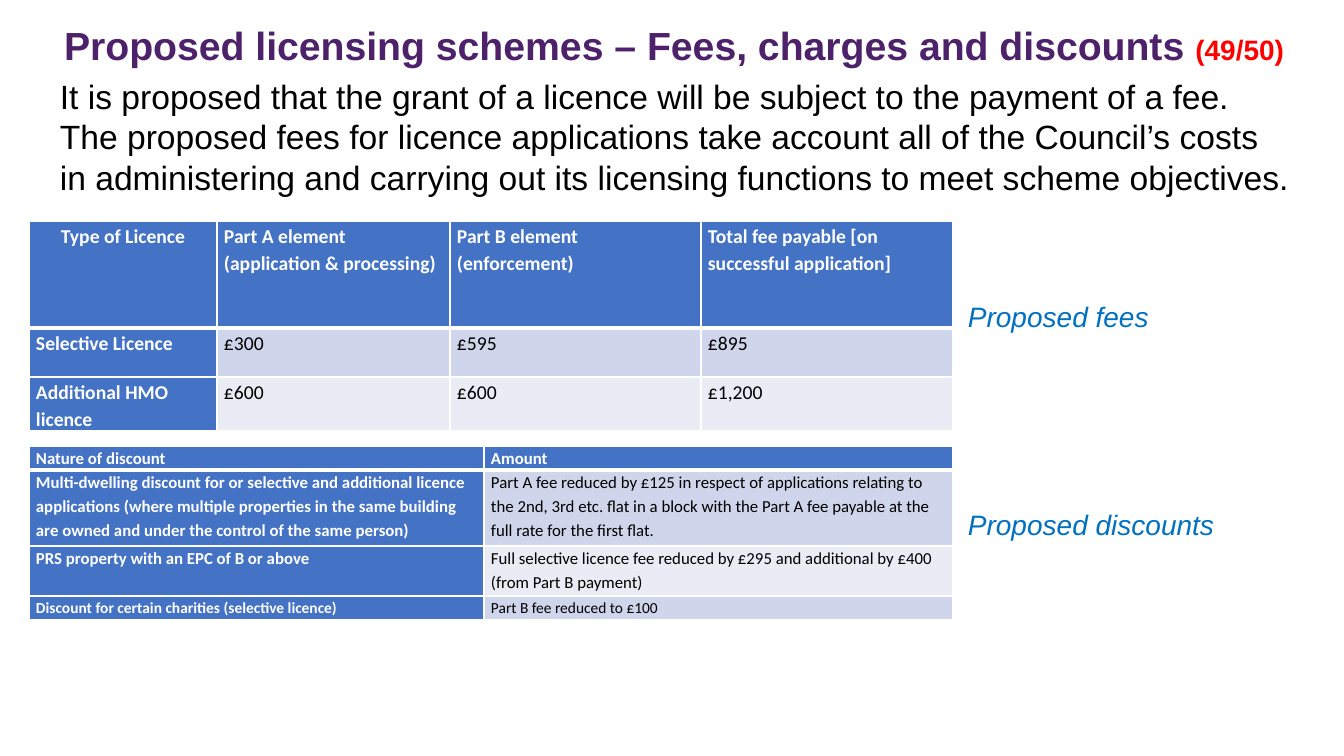
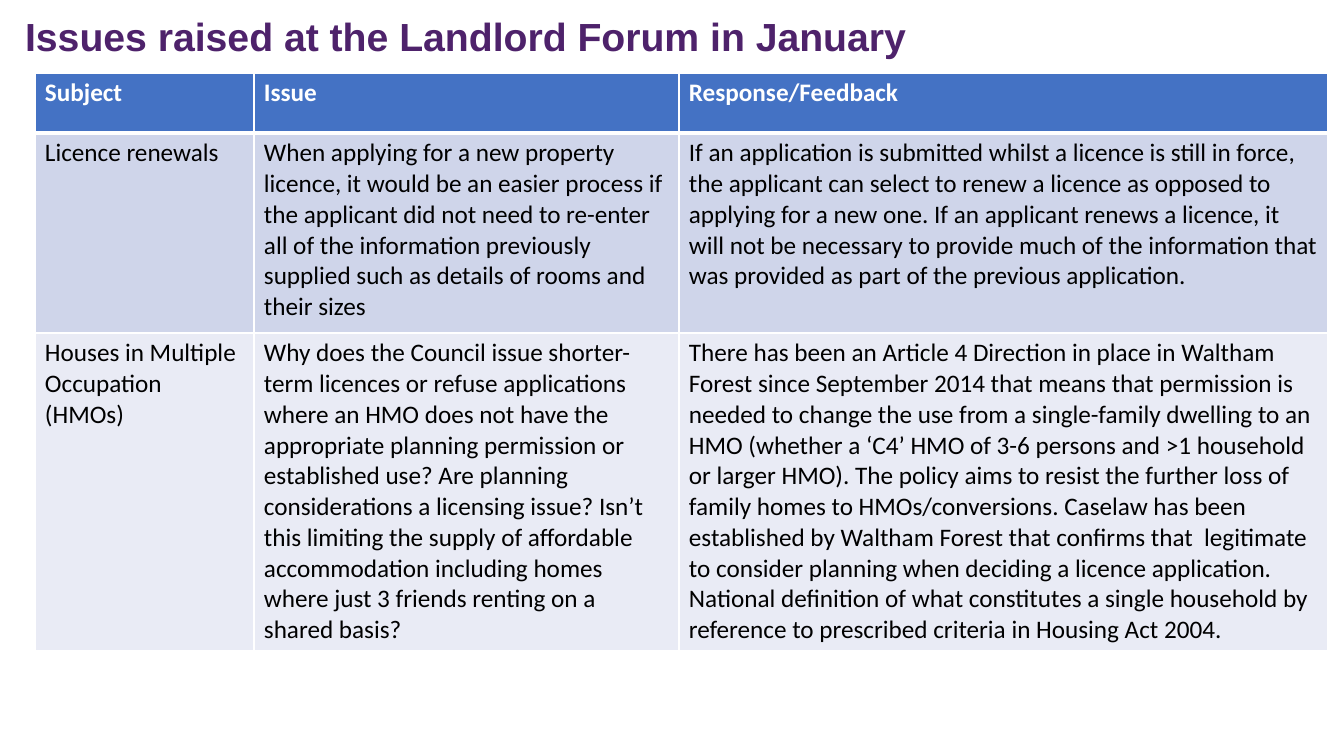
from dataclasses import dataclass

import pptx
import pptx.dml.color
import pptx.enum.text
import pptx.util
from lxml import etree
from pptx.oxml.ns import qn


@dataclass(frozen=True)
class Theme:
    heading_font: str = "Arial"
    table_font: str = "Calibri"
    purple: str = "4E226B"
    red: str = "FF0000"
    label_blue: str = "0070C0"
    header_blue: str = "4472C4"
    bands: tuple = ("CFD5EA", "E9EBF5")
    black: str = "000000"
    white: str = "FFFFFF"
    title: int = 28
    body: int = 24
    label: int = 20
    issue: int = 18
    fee: int = 14
    discount: int = 12
    small: int = 11
    rule: int = 1
    header_rule: int = 3


THEME = Theme()
PX = 914400 / 100.8
ALIGN = pptx.enum.text.PP_ALIGN


def add_span(para, text, font, size, colour, bold=False, italic=False):
    span = para.add_run()
    span.text = text
    span.font.name = font
    span.font.size = pptx.util.Pt(size)
    span.font.bold = bold
    span.font.italic = italic
    span.font.color.rgb = pptx.dml.color.RGBColor.from_string(colour)


def add_grid(slide, left, top, widths, heights, rows, sizes, margins, spacing, label_column):
    """Add a banded table; label_column gives the first column the header look."""
    frame = slide.shapes.add_table(
        len(rows), len(widths),
        *(round(n * PX) for n in (left, top, sum(widths), sum(heights))))
    table = frame.table
    table.first_col = label_column
    for column, width in zip(table.columns, widths):
        column.width = round(width * PX)
    for row, height in zip(table.rows, heights):
        row.height = round(height * PX)
    for r, texts in enumerate(rows):
        for c, text in enumerate(texts):
            cell = table.cell(r, c)
            cell.margin_left = cell.margin_right = round(margins[0] * PX)
            cell.margin_top = cell.margin_bottom = round(margins[1] * PX)
            strong = r == 0 or (label_column and c == 0)
            para = cell.text_frame.paragraphs[0]
            para.line_spacing = spacing
            add_span(para, text, THEME.table_font, sizes[r],
                     THEME.white if strong else THEME.black, strong)
            cell_props = cell._tc.get_or_add_tcPr()
            for side in ("L", "R", "T", "B"):
                thick = (r, side) in ((0, "B"), (1, "T"))
                weight = THEME.header_rule if thick else THEME.rule
                line = etree.SubElement(cell_props, qn(f"a:ln{side}"), w=str(pptx.util.Pt(weight)))
                paint = etree.SubElement(line, qn("a:solidFill"))
                etree.SubElement(paint, qn("a:srgbClr"), val=THEME.white)
            cell.fill.solid()
            fill = THEME.header_blue if strong else THEME.bands[(r - 1) % 2]
            cell.fill.fore_color.rgb = pptx.dml.color.RGBColor.from_string(fill)
    return table


deck = pptx.Presentation()
deck.slide_width = round(1344 * PX)
deck.slide_height = round(756 * PX)

# Titles: place, then (text, size, colour) spans
titles = [
    ((54, 22, 1290, 36), [
        ("Proposed licensing schemes – Fees, charges and discounts ", THEME.title, THEME.purple),
        ("(49/50)", THEME.label, THEME.red)]),
    ((15, 13, 1016, 67), [
        ("Issues raised at the Landlord Forum in January", THEME.title, THEME.purple)]),
]
for place, spans in titles:
    page = deck.slides.add_slide(deck.slide_layouts[5])
    box = page.shapes.title
    box.left, box.top, box.width, box.height = (round(n * PX) for n in place)
    box.text_frame.auto_size = pptx.enum.text.MSO_AUTO_SIZE.NONE
    box.text_frame.vertical_anchor = pptx.enum.text.MSO_ANCHOR.TOP
    para = box.text_frame.paragraphs[0]
    para.alignment = ALIGN.LEFT
    para.line_spacing = 0.9
    for text, size, colour in spans:
        add_span(para, text, THEME.heading_font, size, colour, bold=True)

fees_page, issues_page = deck.slides

# Fees page: introduction and the two side labels
fees_texts = [
    ((50, 71, 1251, 132), THEME.body, THEME.black, False,
     "It is proposed that the grant of a licence will be subject to the payment of a fee. "
     "The proposed fees for licence applications take account all of the Council’s costs "
     "in administering and carrying out its licensing functions to meet scheme objectives."),
    ((958, 295, 300, 42), THEME.label, THEME.label_blue, True, "Proposed fees"),
    ((958, 503, 300, 42), THEME.label, THEME.label_blue, True, "Proposed discounts"),
]
for place, size, colour, italic, text in fees_texts:
    box = fees_page.shapes.add_textbox(*(round(n * PX) for n in place))
    box.text_frame.word_wrap = True
    add_span(box.text_frame.paragraphs[0], text, THEME.heading_font, size, colour, italic=italic)

fees = add_grid(
    fees_page, 29, 221, (188, 233, 251, 252), (107, 49, 54),
    [
        ("Type of Licence", "Part A element (application & processing)",
         "Part B element (enforcement)", "Total fee payable [on successful application]"),
        ("Selective Licence", "£300", "£595", "£895"),
        ("Additional HMO licence", "£600", "£600", "£1,200"),
    ],
    [THEME.fee] * 3, (7, 0), 1.15, True)
fees.cell(0, 0).text_frame.paragraphs[0].alignment = ALIGN.CENTER

add_grid(
    fees_page, 29, 446, (455, 469), (24, 76, 50, 24),
    [
        ("Nature of discount", "Amount"),
        ("Multi-dwelling discount for or selective and additional licence applications "
         "(where multiple properties in the same building are owned and under the control "
         "of the same person)",
         "Part A fee reduced by £125 in respect of applications relating to the 2nd, 3rd etc. "
         "flat in a block with the Part A fee payable at the full rate for the first flat."),
        ("PRS property with an EPC of B or above",
         "Full selective licence fee reduced by £295 and additional by £400 (from Part B payment)"),
        ("Discount for certain charities (selective licence)", "Part B fee reduced to £100"),
    ],
    [THEME.discount] * 3 + [THEME.small], (7, 0), 1.15, True)

# Issues page
add_grid(
    issues_page, 35, 73, (219, 425, 649), (60, 200, 317),
    [
        ("Subject", "Issue", "Response/Feedback"),
        ("Licence renewals",
         "When applying for a new property licence, it would be an easier process if the "
         "applicant did not need to re-enter all of the information previously supplied such "
         "as details of rooms and their sizes",
         "If an application is submitted whilst a licence is still in force, the applicant can "
         "select to renew a licence as opposed to applying for a new one. If an applicant renews "
         "a licence, it will not be necessary to provide much of the information that was "
         "provided as part of the previous application."),
        ("Houses in Multiple Occupation (HMOs)",
         "Why does the Council issue shorter-term licences or refuse applications where an HMO "
         "does not have the appropriate planning permission or established use? Are planning "
         "considerations a licensing issue? Isn’t this limiting the supply of affordable "
         "accommodation including homes where just 3 friends renting on a shared basis?",
         "There has been an Article 4 Direction in place in Waltham Forest since September 2014 "
         "that means that permission is needed to change the use from a single-family dwelling "
         "to an HMO (whether a ‘C4’ HMO of 3-6 persons and >1 household or larger HMO). The "
         "policy aims to resist the further loss of family homes to HMOs/conversions. Caselaw "
         "has been established by Waltham Forest that confirms that  legitimate to consider "
         "planning when deciding a licence application. National definition of what constitutes "
         "a single household by reference to prescribed criteria in Housing Act 2004."),
    ],
    [THEME.issue] * 3, (10, 5), 1.0, False)

deck.save("out.pptx")
